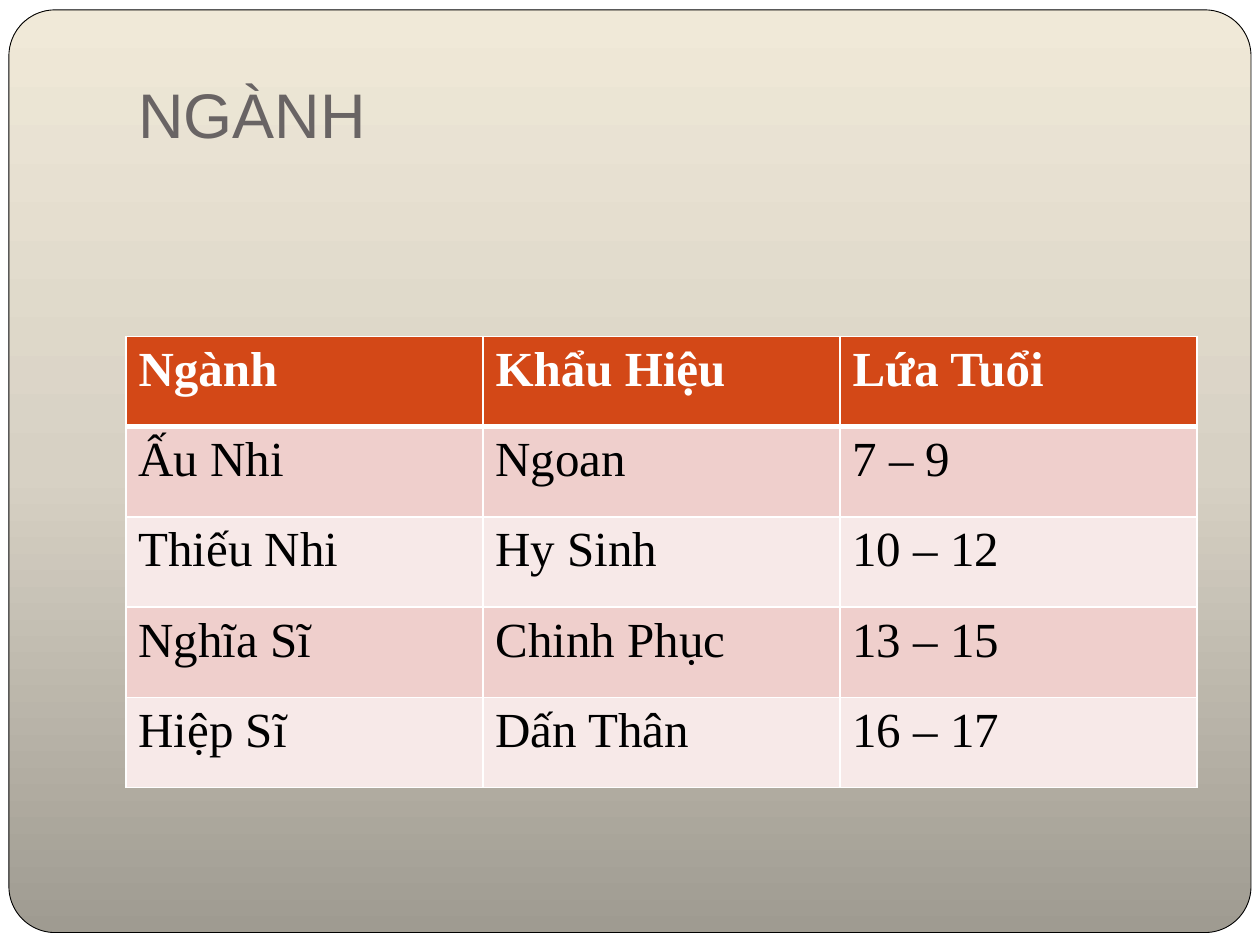
import copy

import pptx
import pptx.dml.color
import pptx.enum.shapes
import pptx.enum.text
import pptx.oxml
import pptx.oxml.ns
import pptx.util

Cm = pptx.util.Cm
Pt = pptx.util.Pt
qn = pptx.oxml.ns.qn


def tint(code):
    """Turn a hex string into a colour."""
    return pptx.dml.color.RGBColor.from_string(code)


def write(frame, text, font, size, color, bold=False):
    run = frame.paragraphs[0].add_run()
    run.text = text
    run.font.name = font
    run.font.size = Pt(size)
    run.font.bold = bold
    run.font.color.rgb = tint(color)


deck = pptx.Presentation()
deck.slide_width = Cm(25.4)
deck.slide_height = Cm(19.05)
slide = deck.slides.add_slide(deck.slide_layouts[6])
slide.background.fill.solid()
slide.background.fill.fore_color.rgb = tint("FFFFFF")

# Rounded panel, dark at the bottom and light at the top
panel = slide.shapes.add_shape(
    pptx.enum.shapes.MSO_SHAPE.ROUNDED_RECTANGLE,
    Cm(0.18), Cm(0.2), Cm(25.04), Cm(18.6))
panel.adjustments[0] = 0.05
panel.shadow.inherit = False
panel.line.color.rgb = tint("000000")
panel.line.width = Pt(0.5)
panel.fill.gradient()
panel.fill.gradient_angle = 90
stops = panel._element.spPr.find(".//" + qn("a:gsLst"))
stops.append(copy.deepcopy(stops[-1]))
shades = [(0, "9F9B91"), (0.5, "D7D1C4"), (1, "F0E9D8")]
for stop, (place, shade) in zip(panel.fill.gradient_stops, shades):
    stop.position = place
    stop.color.rgb = tint(shade)

# Title
title = slide.shapes.add_textbox(Cm(2.54), Cm(0.84), Cm(21.59), Cm(2.46))
frame = title.text_frame
frame.word_wrap = True
frame.vertical_anchor = pptx.enum.text.MSO_ANCHOR.BOTTOM
frame.margin_bottom = Cm(0.25)
write(frame, "NGÀNH", font="Arial", size=36, color="696464")

# Table
rows = [
    ("Ngành", "Khẩu Hiệu", "Lứa Tuổi"),
    ("Ấu Nhi", "Ngoan", "7 – 9"),
    ("Thiếu Nhi", "Hy Sinh", "10 – 12"),
    ("Nghĩa Sĩ", "Chinh Phục", "13 – 15"),
    ("Hiệp Sĩ", "Dấn Thân", "16 – 17"),
]
table = slide.shapes.add_table(
    len(rows), 3, Cm(2.54), Cm(6.78), Cm(21.59), Cm(9.1)).table
for r, row in enumerate(rows):
    head = r == 0
    back = "D34817" if head else ("F7E9E8", "EFCFCC")[r % 2]
    for c, text in enumerate(row):
        cell = table.cell(r, c)
        write(cell.text_frame, text, font="Times New Roman", size=28,
              color="FFFFFF" if head else "000000", bold=head)
        for side in "LRTB":
            thick = (r, side) in [(0, "B"), (1, "T")]
            edge = pptx.oxml.parse_xml(
                f'<a:ln{side} {pptx.oxml.ns.nsdecls("a")} '
                f'w="{Pt(3 if thick else 1)}"><a:solidFill>'
                f'<a:srgbClr val="FFFFFF"/></a:solidFill></a:ln{side}>')
            cell._tc.get_or_add_tcPr().append(edge)
        cell.fill.solid()
        cell.fill.fore_color.rgb = tint(back)

deck.save("out.pptx")
